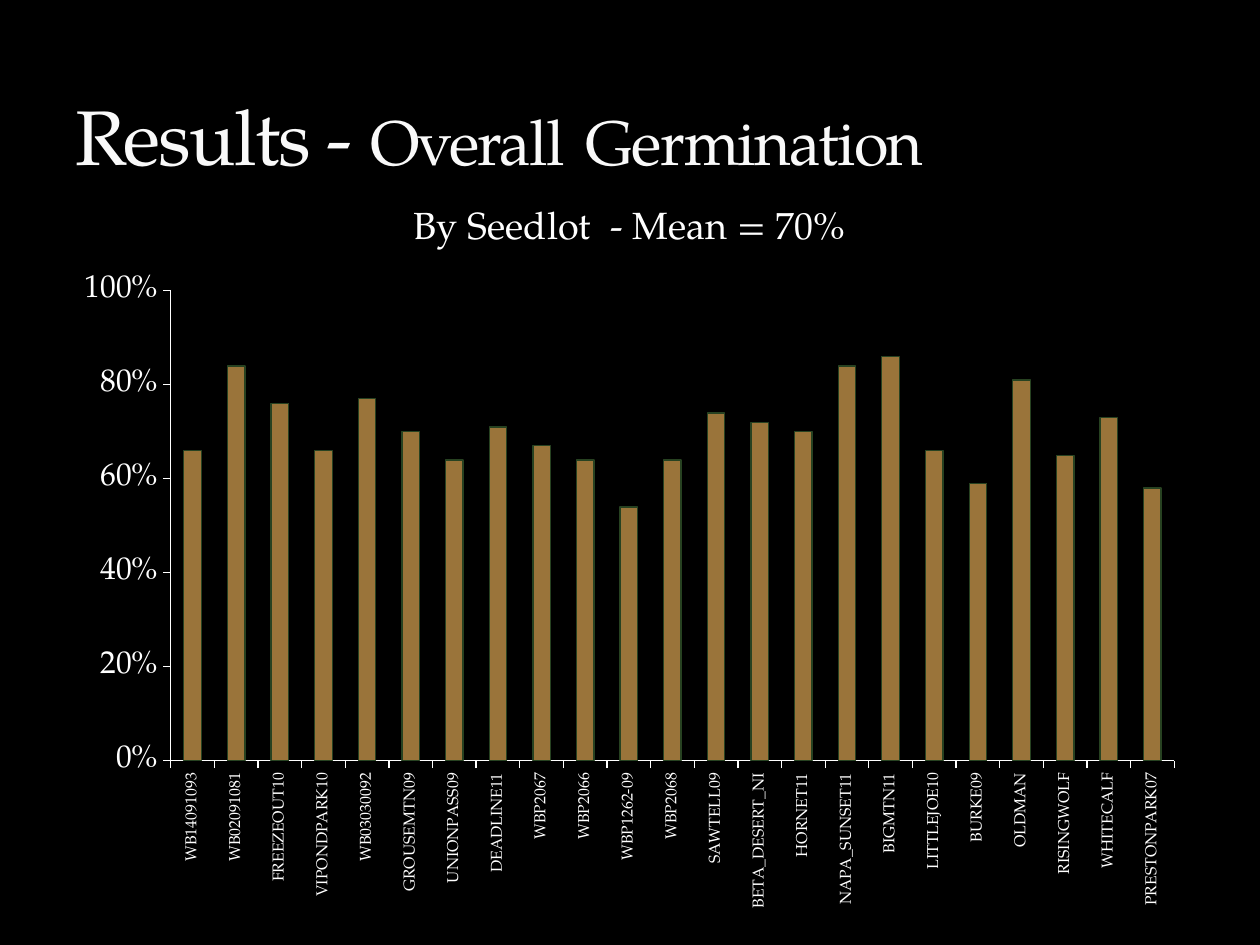
from lxml import etree
from pptx import Presentation
from pptx.chart.data import CategoryChartData
from pptx.dml.color import RGBColor
from pptx.enum.chart import XL_CHART_TYPE, XL_TICK_MARK
from pptx.enum.text import MSO_ANCHOR
from pptx.oxml.ns import qn
from pptx.util import Inches, Pt

FONT = "TeX Gyre Pagella"
GERMINATION = {
    "WB14091093": 0.66, "WB02091081": 0.84, "FREEZEOUT10": 0.76,
    "VIPONDPARK10": 0.66, "WB03030092": 0.77, "GROUSEMTN09": 0.7,
    "UNIONPASS09": 0.64, "DEADLINE11": 0.71, "WBP2067": 0.67,
    "WBP2066": 0.64, "WBP1262-09": 0.54, "WBP2068": 0.64,
    "SAWTELL09": 0.74, "BETA_DESERT_NI": 0.72, "HORNET11": 0.7,
    "NAPA_SUNSET11": 0.84, "BIGMTN11": 0.86, "LITTLEJOE10": 0.66,
    "BURKE09": 0.59, "OLDMAN": 0.81, "RISINGWOLF": 0.65,
    "WHITECALF": 0.73, "PRESTONPARK07": 0.58,
}


def color(hex_string):
    return RGBColor.from_string(hex_string)


def style_font(font, size, hex_string):
    font.name = FONT
    font.size = Pt(size)
    font.bold = False
    font.color.rgb = color(hex_string)


def style_line(line, hex_string):
    line.color.rgb = color(hex_string)
    line.width = Pt(0.75)


def add_title(page, left, top, width, height):
    box = page.shapes.add_textbox(left, top, width, height)
    frame = box.text_frame
    frame.word_wrap = True
    frame.vertical_anchor = MSO_ANCHOR.BOTTOM
    para = frame.paragraphs[0]
    for text, size in (("Results - ", 44), ("Overall", 36), (" ", 48), ("Germination", 36)):
        span = para.add_run()
        span.text = text
        style_font(span.font, size, "F9F9F9")
        span.font._element.set("spc", "-100")


def place_plot(chart, **fractions):
    """Fix the inner plot area as fractions (x, y, w, h) of the chart."""
    plot_area = chart._chartSpace.chart.plotArea
    for old in plot_area.findall(qn("c:layout")):
        plot_area.remove(old)
    layout = etree.Element(qn("c:layout"))
    manual = etree.SubElement(layout, qn("c:manualLayout"))
    settings = {"layoutTarget": "inner", "xMode": "edge", "yMode": "edge", **fractions}
    for name, value in settings.items():
        etree.SubElement(manual, qn("c:" + name)).set("val", str(value))
    plot_area.insert(0, layout)


def style_axis(axis, label_size):
    axis.major_tick_mark = XL_TICK_MARK.OUTSIDE
    axis.minor_tick_mark = XL_TICK_MARK.NONE
    style_font(axis.tick_labels.font, label_size, "FFFFFF")
    style_line(axis.format.line, "FFFFFF")


def add_germination_chart(page, left, top, width, height):
    data = CategoryChartData(number_format="0%")
    data.categories = list(GERMINATION)
    data.add_series("Series 1", list(GERMINATION.values()))
    chart = page.shapes.add_chart(
        XL_CHART_TYPE.COLUMN_CLUSTERED, left, top, width, height, data).chart
    style_font(chart.font, 18, "FFFFFF")
    chart.has_legend = False
    chart.has_title = True
    para = chart.chart_title.text_frame.paragraphs[0]
    para.text = "By Seedlot  - Mean = 70%"
    style_font(para.font, 21.6, "FFFFFF")
    chart.chart_title.include_in_layout = False

    seedlots, rates = chart.category_axis, chart.value_axis
    style_axis(seedlots, 9)
    label_body = seedlots._element.find(qn("c:txPr")).find(qn("a:bodyPr"))
    label_body.set("rot", "-5400000")
    label_body.set("vert", "horz")

    style_axis(rates, 18)
    rates.minimum_scale, rates.maximum_scale, rates.major_unit = 0, 1, 0.2
    rates.tick_labels.number_format = "0%"
    rates.tick_labels.number_format_is_linked = False
    style_line(rates.major_gridlines.format.line, "000000")

    plot = chart.plots[0]
    plot.gap_width = 150
    plot.vary_by_categories = False
    bars = plot.series[0].format
    bars.fill.solid()
    bars.fill.fore_color.rgb = color("9A743A")
    style_line(bars.line, "274221")
    place_plot(chart, x=0.095, y=0.15, w=0.885, h=0.63)


def main():
    deck = Presentation()
    deck.slide_width, deck.slide_height = Inches(10), Inches(7.5)
    page = deck.slides.add_slide(deck.slide_layouts[6])
    page.background.fill.solid()
    page.background.fill.fore_color.rgb = color("000000")
    add_title(page, Inches(0.5), Inches(0.17), Inches(9), Inches(1.33))
    add_germination_chart(page, Inches(0.5), Inches(1.42), Inches(9), Inches(5.92))
    deck.save("out.pptx")


if __name__ == "__main__":
    main()
